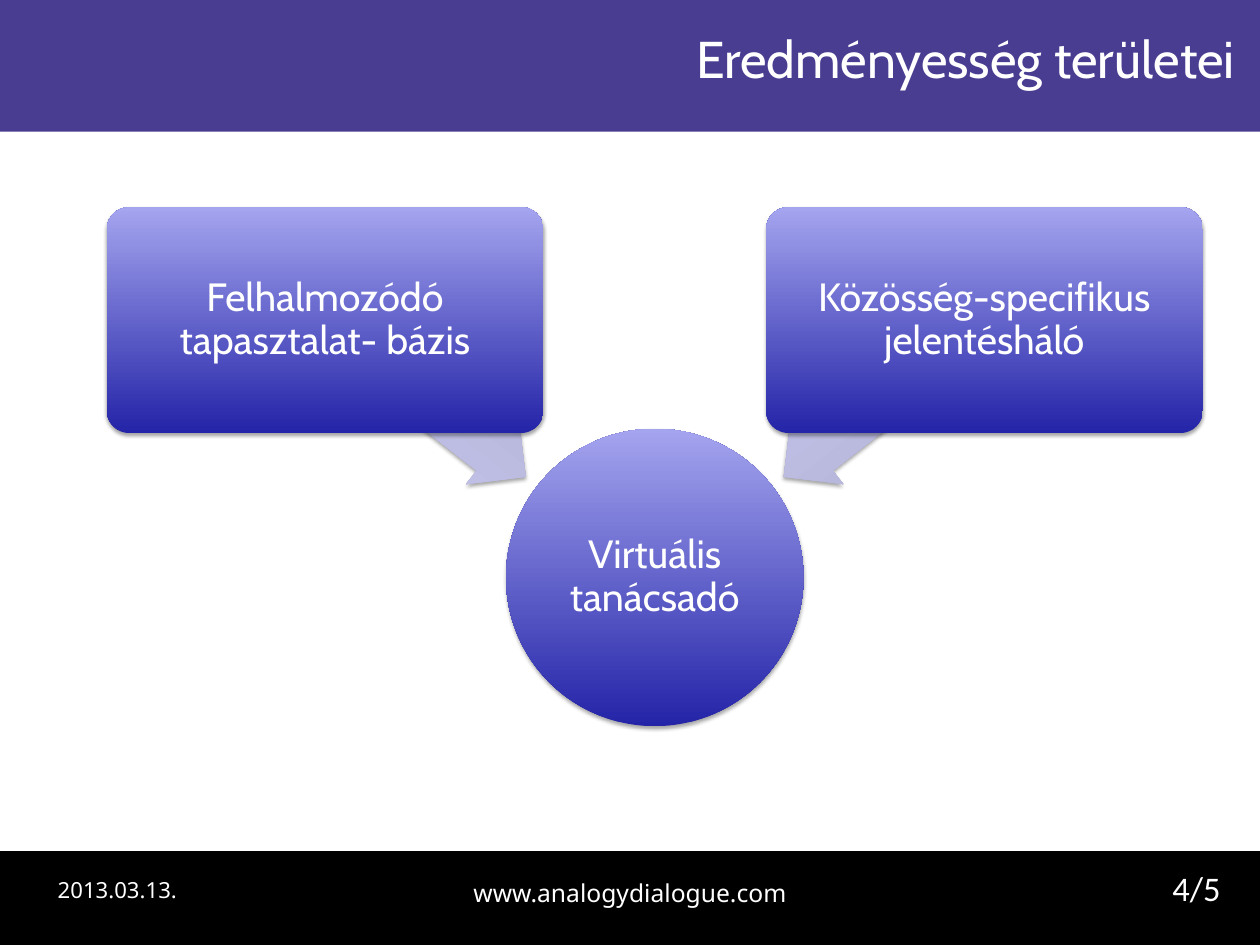
from dataclasses import dataclass

import pptx
import pptx.dml.color
import pptx.enum.shapes
import pptx.enum.text
import pptx.oxml
import pptx.oxml.ns
import pptx.util

Cm = pptx.util.Cm
Shape = pptx.enum.shapes.MSO_SHAPE
Align = pptx.enum.text.PP_ALIGN
Anchor = pptx.enum.text.MSO_ANCHOR


@dataclass(frozen=True)
class Theme:
    """Colours, fonts and type sizes of the deck."""
    header: str = "483D91"
    footer: str = "000000"
    text: str = "FFFFFF"
    node: tuple = ("2424A8", "A4A4EF")
    arrow: tuple = ("AAAACE", "CDCDF4")
    heading_font: str = "Cabin"
    footer_font: str = "Noto Sans"
    number_font: str = "Calibri"
    title_size: int = 42
    node_size: int = 32
    number_size: int = 28
    site_size: int = 20
    date_size: int = 18


class SlideBuilder:
    """Draws the elements of one slide in the given theme."""

    def __init__(self, slide, theme):
        self.slide = slide
        self.theme = theme

    def color(self, value):
        return pptx.dml.color.RGBColor.from_string(value)

    def add_text(self, holder, text, font, size, align, inset):
        frame = holder.text_frame
        frame.word_wrap = True
        frame.margin_left = frame.margin_right = Cm(inset)
        frame.margin_top = frame.margin_bottom = Cm(inset)
        paragraph = frame.paragraphs[0]
        paragraph.alignment = align
        run = paragraph.add_run()
        run.text = text
        run.font.name = font
        run.font.size = pptx.util.Pt(size)
        run.font.color.rgb = self.color(self.theme.text)
        return frame

    def label(self, box, text, font, size, align, inset=0.18):
        holder = self.slide.shapes.add_textbox(*map(Cm, box))
        return self.add_text(holder, text, font, size, align, inset)

    def shape(self, kind, box):
        added = self.slide.shapes.add_shape(kind, *map(Cm, box))
        added.shadow.inherit = False
        added.line.fill.background()
        return added

    def band(self, box, fill):
        band = self.shape(Shape.RECTANGLE, box)
        band.fill.solid()
        band.fill.fore_color.rgb = self.color(fill)

    def shaded(self, kind, center, size, colors):
        (x, y), (width, height) = center, size
        added = self.shape(kind, (x - width / 2, y - height / 2, width, height))
        added.fill.gradient()
        added.fill.gradient_angle = 90
        for position, (stop, value) in enumerate(zip(added.fill.gradient_stops, colors)):
            stop.position = position
            stop.color.rgb = self.color(value)
        effects = added._element.spPr.find(pptx.oxml.ns.qn("a:effectLst"))
        effects.append(pptx.oxml.parse_xml(
            f'<a:outerShdw {pptx.oxml.ns.nsdecls("a")} blurRad="39370" dist="22860" '
            'dir="5400000" rotWithShape="0"><a:srgbClr val="000000">'
            '<a:alpha val="35000"/></a:srgbClr></a:outerShdw>'))
        return added

    def node(self, kind, center, size, text, inset=0.18):
        node = self.shaded(kind, center, size, self.theme.node)
        if kind == Shape.ROUNDED_RECTANGLE:
            node.adjustments[0] = 0.1
        frame = self.add_text(node, text, self.theme.heading_font, self.theme.node_size,
                              Align.CENTER, inset)
        frame.vertical_anchor = Anchor.MIDDLE
        frame.paragraphs[0].line_spacing = 0.9

    def arrow(self, center, size, rotation):
        arrow = self.shaded(Shape.LEFT_ARROW, center, size, self.theme.arrow)
        arrow.adjustments[0] = 0.6
        arrow.adjustments[1] = 0.5
        arrow.rotation = rotation


def main():
    theme = Theme()
    width, height = 36.12, 27.1
    deck = pptx.Presentation()
    deck.slide_width, deck.slide_height = Cm(width), Cm(height)
    builder = SlideBuilder(deck.slides.add_slide(deck.slide_layouts[6]), theme)

    builder.band((0, 0, width, 3.78), theme.header)
    builder.band((0, 24.41, width, height - 24.41), theme.footer)
    builder.label((0, 24.99, width, 1.17), "www.analogydialogue.com",
                  theme.footer_font, theme.site_size, Align.CENTER)
    builder.label((0.58, 24.94, 4.67, 1), "2013.03.13.",
                  theme.footer_font, theme.date_size, Align.RIGHT)
    builder.label((13.87, 0.66, 21.62, 1.93), "Eredményesség területei",
                  theme.heading_font, theme.title_size, Align.RIGHT, 0.1)

    axis = 18.77
    builder.node(Shape.OVAL, (axis, 16.56), (8.53, 8.53), "Virtuális tanácsadó", 0.05)
    sources = [(-1, 218, "Felhalmozódó tapasztalat- bázis"),
               (1, 322, "Közösség-specifikus jelentésháló")]
    for side, rotation, text in sources:
        builder.arrow((axis + side * 6.57, 11.43), (7.29, 2.44), rotation)
        builder.node(Shape.ROUNDED_RECTANGLE, (axis + side * 9.45, 9.18), (12.52, 6.48), text)

    page_number = builder.label((33.35, 24.74, 1.9, 1.45), "4/5",
                                theme.number_font, theme.number_size, Align.CENTER, 0.13)
    page_number.word_wrap = False
    deck.save("out.pptx")


if __name__ == "__main__":
    main()
